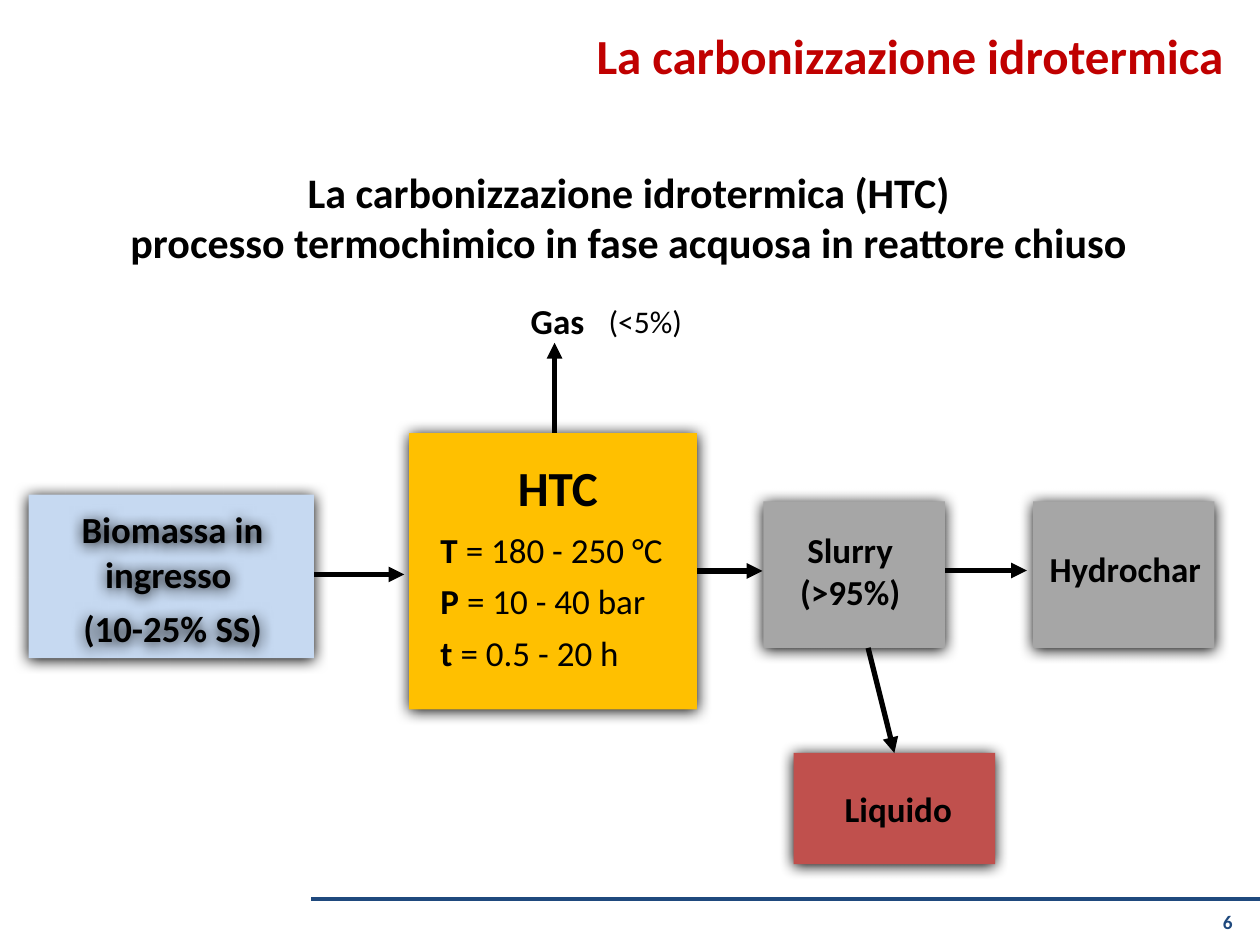
from typing import NamedTuple

import pptx
import pptx.dml.color
import pptx.enum.shapes
import pptx.enum.text
import pptx.oxml
import pptx.oxml.ns
import pptx.util

Cm = pptx.util.Cm
Pt = pptx.util.Pt
RGBColor = pptx.dml.color.RGBColor
ALIGN = pptx.enum.text.PP_ALIGN
ANCHOR = pptx.enum.text.MSO_ANCHOR
AUTO = pptx.enum.text.MSO_AUTO_SIZE

BLACK = RGBColor(0x00, 0x00, 0x00)
NAVY = RGBColor(0x1F, 0x49, 0x7D)
DARK_RED = RGBColor(0xC0, 0x00, 0x00)
RED = RGBColor(0xC0, 0x50, 0x4D)
GREY = RGBColor(0xA6, 0xA6, 0xA6)
AMBER = RGBColor(0xFF, 0xC0, 0x00)
PALE_BLUE = RGBColor(0xC6, 0xD9, 0xF1)

FONT = "Calibri"
A_NS = pptx.oxml.ns.nsdecls("a")
TOP_SIDE = 0


class Box(NamedTuple):
    x: float
    y: float
    w: float
    h: float
    fill: RGBColor


class Label(NamedTuple):
    """Each line is a tuple of runs; only its first run is bold, if bold is set."""
    x: float
    y: float
    w: float
    h: float
    lines: tuple
    size: float = 20
    align: ALIGN = ALIGN.LEFT
    bold: bool = True
    color: RGBColor = BLACK
    space_after: float = 0
    anchor: ANCHOR = ANCHOR.TOP
    shadow: bool = False


class Arrow(NamedTuple):
    x1: float
    y1: float
    x2: float
    y2: float


LIQUID = Box(16, 15.18, 4.06, 2.24, RED)
BOXES = [
    Box(15.39, 10.11, 3.66, 2.95, GREY),
    Box(20.83, 10.11, 3.65, 2.95, GREY),
    Box(8.25, 8.73, 5.8, 5.57, AMBER),
    Box(0.58, 9.97, 5.75, 3.3, PALE_BLUE),
]

# These start under their boxes, so they are drawn first.
FLOW_ARROWS = [
    Arrow(3.84, 11.58, 8.15, 11.58),
    Arrow(12.09, 11.51, 15.37, 11.51),
    Arrow(17.4, 11.5, 20.7, 11.5),
    Arrow(11.18, 9.65, 11.18, 6.91),
]
LIQUID_ARROW = Arrow(17.5, 13.06, 18.03, 15.18)

CONDITIONS = [("T ", "= 180 - 250 °C"), ("P ", "= 10 - 40 bar"), ("t ", "= 0.5 - 20 h")]
CONDITION_TOP, CONDITION_PITCH = 10.52, 1.04

LABELS = [
    Label(0.52, 3.23, 24.31, 2.31,
          (("La carbonizzazione idrotermica (HTC)",),
           ("processo termochimico in fase acquosa in reattore chiuso",)), 24, ALIGN.CENTER),
    Label(0.79, 10.1, 5.38, 3.18, (("Biomassa in ingresso ",), ("(10-25% SS)",)),
          21, ALIGN.CENTER, space_after=6, shadow=True),
    Label(10.19, 9.09, 3.58, 1.45, (("HTC",),), 28),
    Label(10.45, 5.92, 1.7, 1.12, (("Gas",),)),
    Label(12.02, 5.97, 3.53, 1.02, (("(<5%)",),), 18, bold=False),
    Label(15.45, 10.53, 3.38, 1.96, (("Slurry",), ("(>95%)",)), align=ALIGN.CENTER),
    Label(15.39, 15.75, 5.44, 1.12, (("Liquido",),), align=ALIGN.CENTER),
    Label(20.88, 10.92, 3.61, 1.12, (("Hydrochar",),), align=ALIGN.CENTER),
    Label(19.18, 18.32, 5.92, 0.53, (("6",),), 11, ALIGN.RIGHT, color=NAVY,
          anchor=ANCHOR.MIDDLE),
] + [
    Label(8.63, CONDITION_TOP + i * CONDITION_PITCH, 6.45, 1.12, (line,))
    for i, line in enumerate(CONDITIONS)
]


def format_run(r, size: float, color: RGBColor, bold: bool) -> None:
    r.font.name = FONT
    r.font.size = Pt(size)
    r.font.bold = bold
    r.font.color.rgb = color


def add_shadow(sp) -> None:
    sp._element.spPr.append(pptx.oxml.parse_xml(
        f'<a:effectLst {A_NS}><a:outerShdw blurRad="{Pt(8.5)}" dist="{Pt(1)}" dir="5400000" '
        'algn="t" rotWithShape="0"><a:srgbClr val="000000"/></a:outerShdw></a:effectLst>'))


def add_title(slide) -> None:
    sp = slide.shapes.title
    sp.left, sp.top, sp.width, sp.height = Cm(11.6), Cm(0.38), Cm(13.31), Cm(1.45)
    tf = sp.text_frame
    tf.text = "La carbonizzazione idrotermica"
    tf.word_wrap = False
    tf.auto_size = AUTO.SHAPE_TO_FIT_TEXT
    tf.vertical_anchor = ANCHOR.MIDDLE
    p = tf.paragraphs[0]
    p.alignment = ALIGN.RIGHT
    format_run(p.runs[0], 28, DARK_RED, True)


def add_box(slide, box: Box):
    sp = slide.shapes.add_shape(pptx.enum.shapes.MSO_SHAPE.RECTANGLE,
                                Cm(box.x), Cm(box.y), Cm(box.w), Cm(box.h))
    sp.fill.solid()
    sp.fill.fore_color.rgb = box.fill
    sp.line.fill.background()
    add_shadow(sp)
    return sp


def add_label(slide, label: Label) -> None:
    sp = slide.shapes.add_textbox(Cm(label.x), Cm(label.y), Cm(label.w), Cm(label.h))
    if label.shadow:
        add_shadow(sp)
    tf = sp.text_frame
    tf.word_wrap = True
    tf.vertical_anchor = label.anchor
    for i, line in enumerate(label.lines):
        p = tf.add_paragraph() if i else tf.paragraphs[0]
        p.alignment = label.align
        if label.space_after:
            p.space_after = Pt(label.space_after)
        for j, text in enumerate(line):
            r = p.add_run()
            r.text = text
            format_run(r, label.size, label.color, label.bold and j == 0)


def add_line(slide, x1: float, y1: float, x2: float, y2: float, color: RGBColor, width: float):
    line = slide.shapes.add_connector(pptx.enum.shapes.MSO_CONNECTOR.STRAIGHT,
                                      Cm(x1), Cm(y1), Cm(x2), Cm(y2))
    line.line.color.rgb = color
    line.line.width = Pt(width)
    line._element.spPr.append(pptx.oxml.parse_xml(f"<a:effectLst {A_NS}/>"))
    return line


def add_arrow(slide, arrow: Arrow):
    line = add_line(slide, *arrow, BLACK, 3)
    line.line._get_or_add_ln().append(
        pptx.oxml.parse_xml(f'<a:tailEnd {A_NS} type="triangle"/>'))
    return line


def main() -> None:
    prs = pptx.Presentation()
    prs.slide_width, prs.slide_height = Cm(25.4), Cm(19.05)
    slide = prs.slides.add_slide(prs.slide_layouts[5])
    add_title(slide)
    add_line(slide, 6.27, 18.13, 25.4, 18.13, NAVY, 2.25)
    for arrow in FLOW_ARROWS:
        add_arrow(slide, arrow)
    liquid = add_box(slide, LIQUID)
    for box in BOXES:
        add_box(slide, box)
    add_arrow(slide, LIQUID_ARROW).end_connect(liquid, TOP_SIDE)
    for label in LABELS:
        add_label(slide, label)
    prs.save("out.pptx")


if __name__ == "__main__":
    main()
